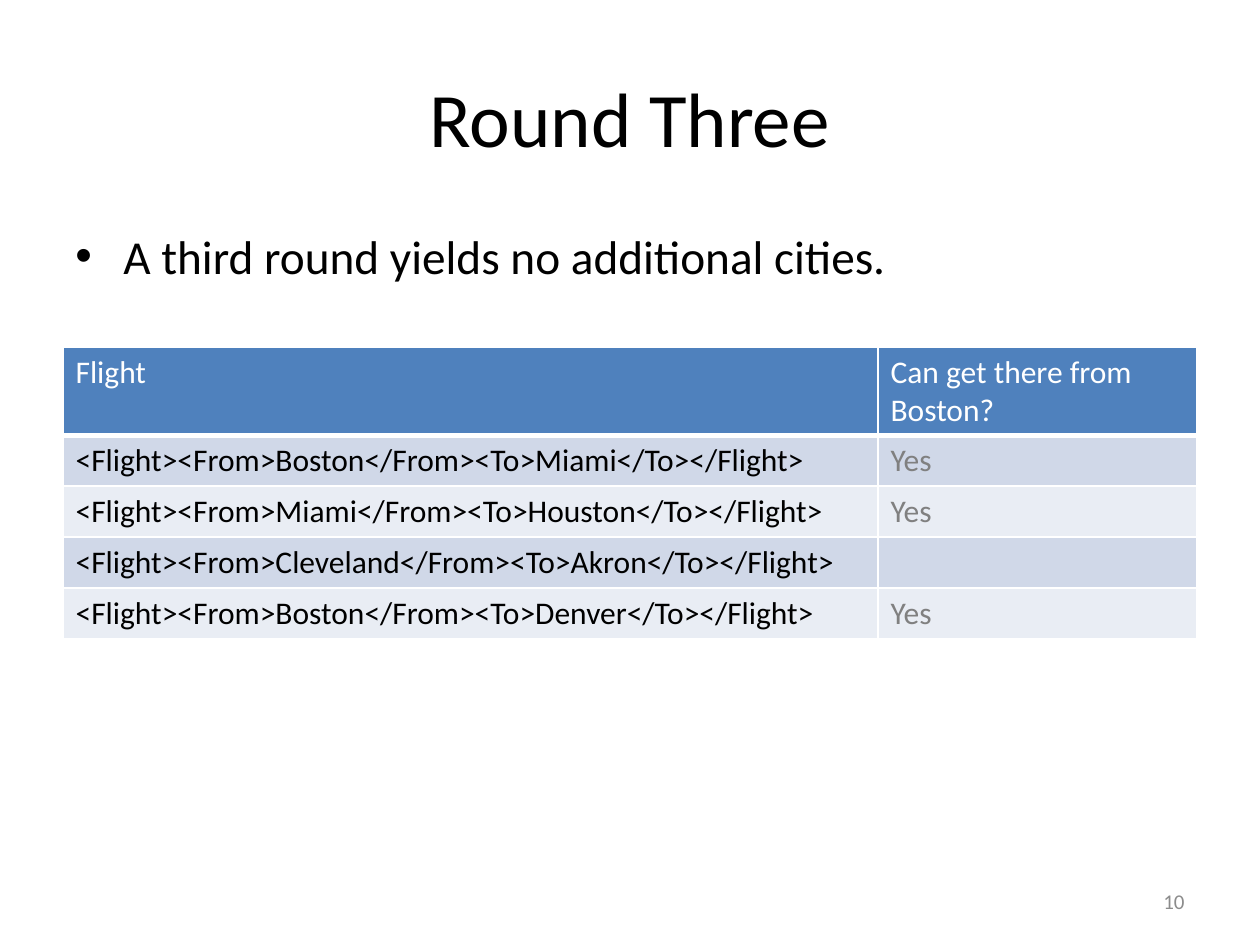
from lxml import etree
from pptx import Presentation
from pptx.dml.color import RGBColor
from pptx.enum.text import MSO_ANCHOR, PP_ALIGN
from pptx.oxml.ns import qn
from pptx.util import Pt

EMU_PER_PX = 914400 / 126
FONT = "Calibri"
TOP, MIDDLE = MSO_ANCHOR.TOP, MSO_ANCHOR.MIDDLE
LEFT, CENTER, RIGHT = PP_ALIGN.LEFT, PP_ALIGN.CENTER, PP_ALIGN.RIGHT

BLACK = RGBColor(0x00, 0x00, 0x00)
WHITE = RGBColor(0xFF, 0xFF, 0xFF)
ANSWER_GRAY = RGBColor(0x80, 0x80, 0x80)
NUMBER_GRAY = RGBColor(0x8C, 0x8C, 0x8C)
HEADER_BLUE = RGBColor(0x4F, 0x81, 0xBD)
BANDS = (RGBColor(0xD0, 0xD8, 0xE8), RGBColor(0xE9, 0xED, 0xF4))

COLUMN_WIDTHS = (815, 319)
HEADER_HEIGHT, ROW_HEIGHT = 88, 51
HEADINGS = ("Flight", "Can get there from Boston?")
FLIGHTS = (
    ("Boston", "Miami", "Yes"),
    ("Miami", "Houston", "Yes"),
    ("Cleveland", "Akron", ""),
    ("Boston", "Denver", "Yes"),
)


def px(length):
    return round(length * EMU_PER_PX)


def style_font(paragraph, size, color):
    paragraph.font.name = FONT
    paragraph.font.size = Pt(size)
    paragraph.font.color.rgb = color


def add_text(slide, box, text, size, color, align=LEFT, anchor=MIDDLE):
    frame = slide.shapes.add_textbox(*map(px, box)).text_frame
    frame.word_wrap = True
    frame.vertical_anchor = anchor
    paragraph = frame.paragraphs[0]
    paragraph.text = text
    paragraph.alignment = align
    style_font(paragraph, size, color)
    return paragraph


def add_bullet(paragraph, indent):
    """Give the paragraph a hanging bullet."""
    properties = paragraph._p.get_or_add_pPr()
    properties.set("marL", str(px(indent)))
    properties.set("indent", str(-px(indent)))
    bullet_font = etree.Element(qn("a:buFont"), typeface="Arial")
    bullet = etree.Element(qn("a:buChar"), char="•")
    defaults = properties.find(qn("a:defRPr"))
    defaults.addprevious(bullet_font)
    defaults.addprevious(bullet)


def set_borders(cell, bottom_width):
    properties = cell._tc.get_or_add_tcPr()
    widths = {"lnL": 1, "lnR": 1, "lnT": 1, "lnB": bottom_width}
    for position, (side, width) in enumerate(widths.items()):
        line = etree.Element(qn(f"a:{side}"), w=str(Pt(width)))
        fill = etree.SubElement(line, qn("a:solidFill"))
        etree.SubElement(fill, qn("a:srgbClr"), val=str(WHITE))
        properties.insert(position, line)


def fill_row(row, texts, colors, background, bottom_width=1):
    for cell, text, color in zip(row.cells, texts, colors):
        cell.text = text
        style_font(cell.text_frame.paragraphs[0], 18, color)
        cell.fill.solid()
        cell.fill.fore_color.rgb = background
        set_borders(cell, bottom_width)


def add_flight_table(slide, left, top):
    height = HEADER_HEIGHT + ROW_HEIGHT * len(FLIGHTS)
    table = slide.shapes.add_table(
        len(FLIGHTS) + 1, len(HEADINGS),
        px(left), px(top), px(sum(COLUMN_WIDTHS)), px(height),
    ).table
    table.first_row = table.horz_banding = False
    for column, width in zip(table.columns, COLUMN_WIDTHS):
        column.width = px(width)

    header, *rows = table.rows
    header.height = px(HEADER_HEIGHT)
    fill_row(header, HEADINGS, (WHITE, WHITE), HEADER_BLUE, bottom_width=3)
    for index, (row, (origin, target, answer)) in enumerate(zip(rows, FLIGHTS)):
        row.height = px(ROW_HEIGHT)
        flight = f"<Flight><From>{origin}</From><To>{target}</To></Flight>"
        fill_row(row, (flight, answer), (BLACK, ANSWER_GRAY), BANDS[index % 2])


def main():
    presentation = Presentation()
    presentation.slide_width = px(1260)
    presentation.slide_height = px(945)
    slide = presentation.slides.add_slide(presentation.slide_layouts[6])

    add_text(slide, (63, 38, 1134, 157), "Round Three", 44, BLACK, CENTER)
    finding = add_text(slide, (63, 221, 1134, 105),
                       "A third round yields no additional cities.",
                       27, BLACK, anchor=TOP)
    finding.space_before = Pt(5.4)
    add_bullet(finding, 48)
    add_flight_table(slide, 63, 347)
    add_text(slide, (903, 876, 294, 50), "10", 12, NUMBER_GRAY, RIGHT)

    presentation.save("out.pptx")


if __name__ == "__main__":
    main()
